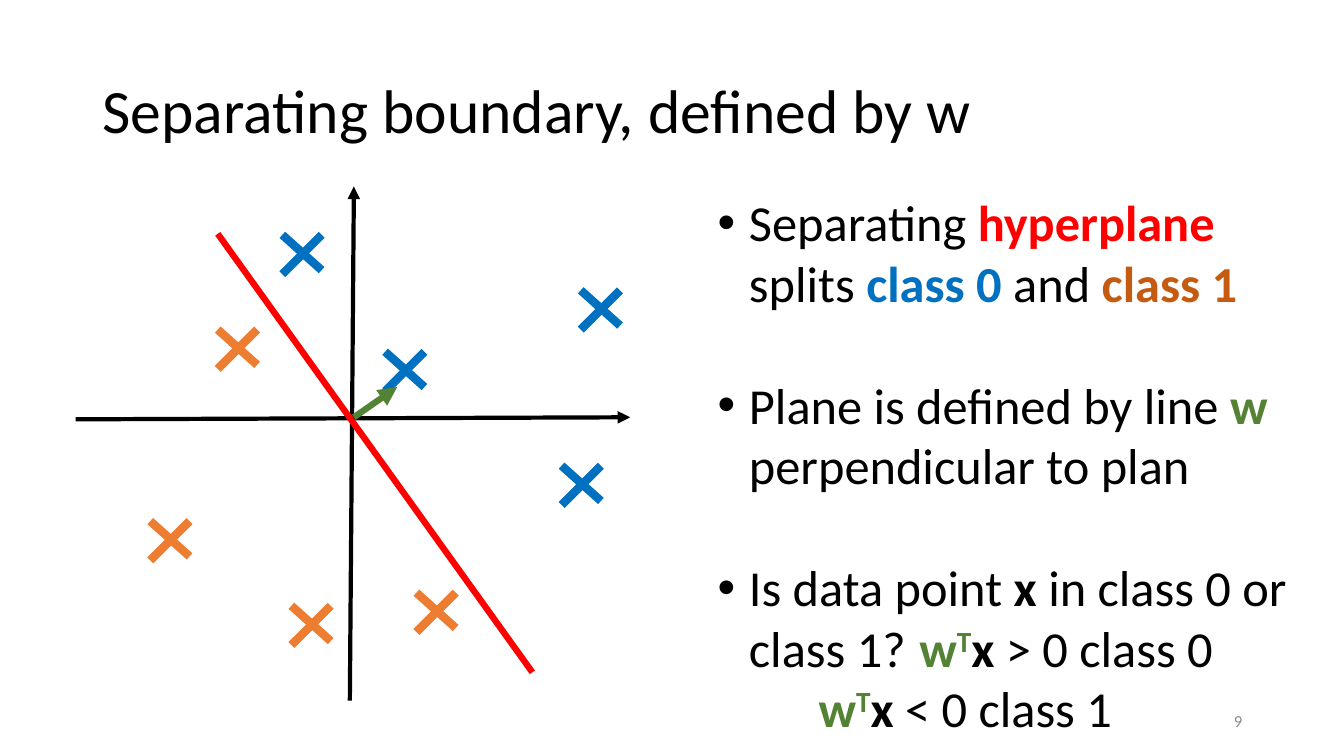
"""Build the slide on a separating boundary defined by w."""
from lxml.etree import SubElement
from pptx import Presentation
from pptx.dml.color import RGBColor
from pptx.enum.shapes import MSO_CONNECTOR as Connector
from pptx.enum.text import MSO_ANCHOR as Anchor, PP_ALIGN as Align
from pptx.oxml.ns import qn
from pptx.util import Inches, Pt

COLORS = {"black": "000000", "gray": "8C8C8C", "red": "FF0000", "blue": "0070C0",
          "orange": "ED7D31", "rust": "C55A11", "green": "548235"}
FONT = "Calibri"
TITLE = "Separating boundary, defined by w"
NUMBER = "9"

PLAIN, BOLD, SUPER = "plain", "bold", "super"
BULLETS = [
    [[("Separating ", "black", PLAIN), ("hyperplane", "red", BOLD),
      (" splits ", "black", PLAIN), ("class 0", "blue", BOLD),
      (" and ", "black", PLAIN), ("class 1", "rust", BOLD)]],
    [[("Plane is defined by line ", "black", PLAIN), ("w ", "green", BOLD),
      ("perpendicular to plan", "black", PLAIN)]],
    [[("Is data point ", "black", PLAIN), ("x", "black", BOLD),
      (" in class 0 or class 1?\t", "black", PLAIN), ("w", "green", BOLD),
      ("T", "green", SUPER), ("x", "black", BOLD), (" > 0 class 0", "black", PLAIN)],
     [("\t\t", "black", PLAIN), ("w", "green", BOLD), ("T", "green", SUPER),
      ("x ", "black", BOLD), ("< 0 class 1", "black", PLAIN)]],
]

AXES = [((3.47, 6.95), (3.51, 1.85)), ((0.75, 4.16), (6.25, 4.14))]
CROSSES = {
    "blue": [(3.82, 3.49), (2.8, 2.33), (5.76, 2.88), (5.57, 4.62)],
    "orange": [(2.16, 3.27), (1.49, 5.17), (2.89, 6.01), (4.13, 5.88)],
}
CROSS_SIZE, CROSS_DROP = 0.39, 0.35
HYPERPLANE = ((2.16, 2.32), (5.28, 6.67))
NORMAL = ((3.51, 4.14), (3.94, 3.84))


def add_line(shapes, start, end, color, width, arrow=False):
    """Draw a straight line, with an arrowhead at its end if asked."""
    line = shapes.add_connector(Connector.STRAIGHT, *map(Inches, start + end))
    line.line.color.rgb = RGBColor.from_string(COLORS[color])
    line.line.width = Pt(width)
    if arrow:
        SubElement(line.line._get_or_add_ln(), qn("a:tailEnd"), type="triangle")
    SubElement(line._element.spPr, qn("a:effectLst"))


def add_cross(page, left, top, color):
    """Draw one data point as two crossing strokes in a group."""
    group = page.shapes.add_group_shape()
    right, bottom = left + CROSS_SIZE, top + CROSS_SIZE
    add_line(group.shapes, (left, top), (right, top + CROSS_DROP), color, 6)
    add_line(group.shapes, (left, bottom), (right, top), color, 6)


def add_box(page, left, top, width, height, anchor):
    """Add a wrapping text box and return its text frame."""
    box = page.shapes.add_textbox(*map(Inches, (left, top, width, height)))
    box.text_frame.word_wrap = True
    box.text_frame.vertical_anchor = anchor
    return box.text_frame


def add_span(para, text, size, color, style=PLAIN):
    """Add one formatted run to a paragraph."""
    span = para.add_run()
    span.text = text
    span.font.name, span.font.size = FONT, Pt(size)
    span.font.bold = style != PLAIN
    span.font.color.rgb = RGBColor.from_string(COLORS[color])
    if style == SUPER:
        span.font._element.set("baseline", "30000")


def add_bullet(para):
    """Give a paragraph a hanging bullet."""
    props = para._p.get_or_add_pPr()
    indent = Inches(0.31)
    props.set("marL", str(indent))
    props.set("indent", str(-indent))
    SubElement(props, qn("a:buFont"), typeface="Arial")
    SubElement(props, qn("a:buChar"), char="•")


def add_bullets(page):
    """Write the bulleted explanation beside the plot."""
    frame = add_box(page, 7.02, 1.85, 5.88, 5.55, Anchor.TOP)
    for index, lines in enumerate(BULLETS):
        para = frame.add_paragraph() if index else frame.paragraphs[0]
        para.space_before = Pt(44 if index else 0)
        add_bullet(para)
        for row, spans in enumerate(lines):
            if row:
                para.add_line_break()
            for text, color, style in spans:
                add_span(para, text, 36, color, style)


def main():
    """Assemble the slide and save it."""
    deck = Presentation()
    deck.slide_width, deck.slide_height = Inches(13.33), Inches(7.5)
    page = deck.slides.add_slide(deck.slide_layouts[6])

    title = add_box(page, 0.92, 0.4, 11.5, 1.45, Anchor.MIDDLE).paragraphs[0]
    title.line_spacing = 0.9
    add_span(title, TITLE, 44, "black")
    number = add_box(page, 9.42, 6.95, 3, 0.4, Anchor.MIDDLE).paragraphs[0]
    number.alignment = Align.RIGHT
    add_span(number, NUMBER, 12, "gray")

    for start, end in AXES:
        add_line(page.shapes, start, end, "black", 3, arrow=True)
    for color, points in CROSSES.items():
        for left, top in points:
            add_cross(page, left, top, color)
    add_line(page.shapes, *HYPERPLANE, "red", 4.5)
    add_line(page.shapes, *NORMAL, "green", 4.5, arrow=True)
    add_bullets(page)
    deck.save("out.pptx")


if __name__ == "__main__":
    main()
